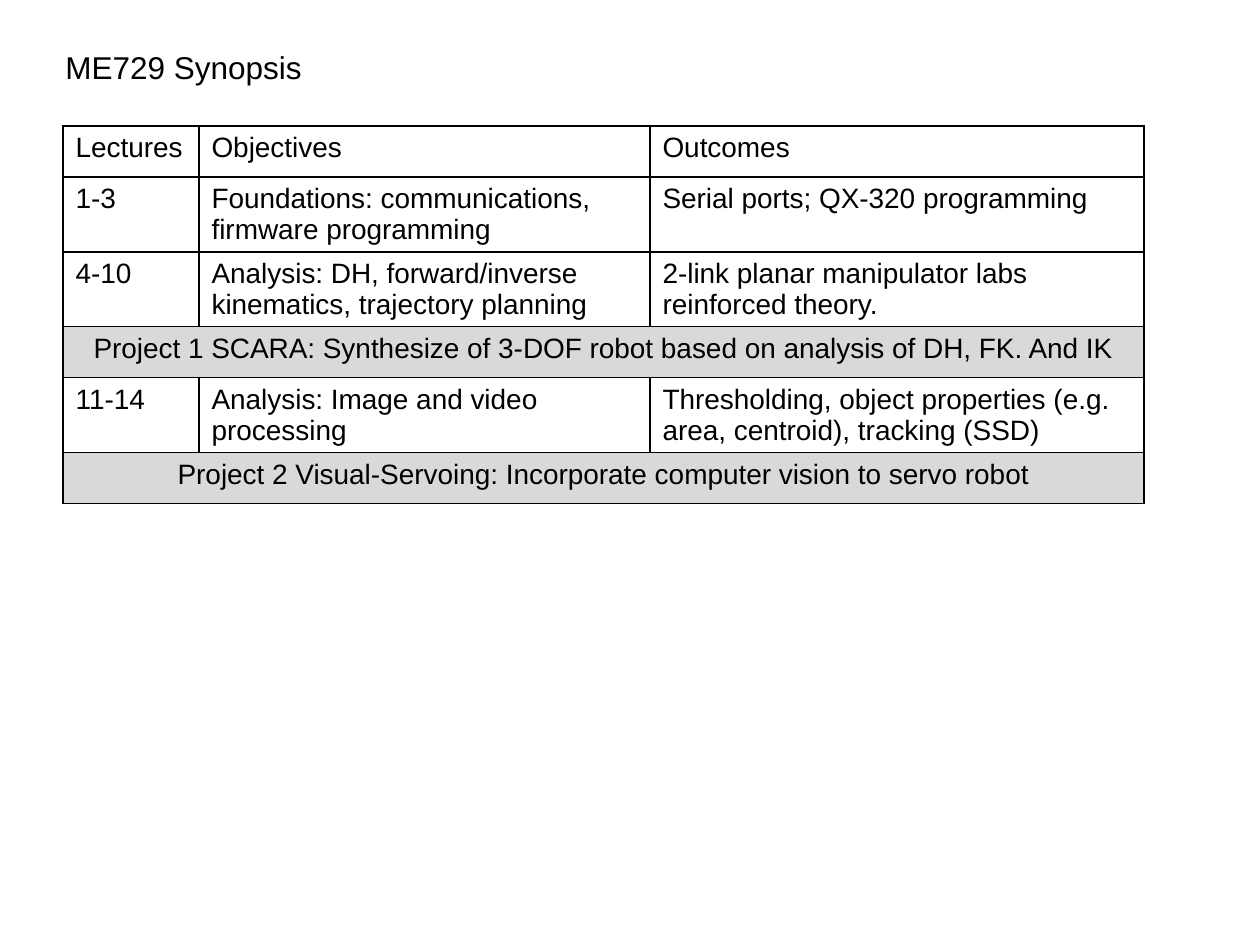
"""Build the ME729 synopsis slide with its lecture table."""
from dataclasses import dataclass

from lxml.etree import SubElement
from pptx import Presentation
from pptx.dml.color import RGBColor
from pptx.enum.text import MSO_AUTO_SIZE, PP_ALIGN
from pptx.oxml.ns import qn
from pptx.util import Pt

TITLE = "ME729 Synopsis"
ROWS = [
    ("Lectures", "Objectives", "Outcomes"),
    ("1-3", "Foundations: communications, firmware programming",
     "Serial ports; QX-320 programming"),
    ("4-10", "Analysis: DH, forward/inverse kinematics, trajectory planning",
     "2-link planar manipulator labs reinforced theory."),
    ("Project 1 SCARA: Synthesize of 3-DOF robot based on analysis of DH, FK. And IK",),
    ("11-14", "Analysis: Image and video processing",
     "Thresholding, object properties (e.g. area, centroid), tracking (SSD)"),
    ("Project 2 Visual-Servoing: Incorporate computer vision to servo robot",),
]
COLUMN_WIDTHS = (136, 451, 494)
ROW_HEIGHT = 51
TABLE_LEFT, TABLE_TOP = 63, 126
TITLE_BOX = (53, 42, 265, 50)
SLIDE_SIZE = (1260, 945)


@dataclass(frozen=True)
class Theme:
    font: str = "Arial"
    ink: str = "000000"
    band: str = "D9D9D9"
    title_size: int = 18
    body_size: int = 16
    border: int = 1


THEME = Theme()


def px(length):
    return round(length * 914400 / 126)


def write(text_frame, text, size, alignment=PP_ALIGN.LEFT):
    text_frame.text = text
    paragraph = text_frame.paragraphs[0]
    paragraph.alignment = alignment
    font = paragraph.runs[0].font
    font.name = THEME.font
    font.size = Pt(size)
    font.color.rgb = RGBColor.from_string(THEME.ink)


def add_borders(cell):
    properties = cell._tc.get_or_add_tcPr()
    for side in ("lnL", "lnR", "lnT", "lnB"):
        line = SubElement(properties, qn(f"a:{side}"), w=str(Pt(THEME.border)))
        fill = SubElement(line, qn("a:solidFill"))
        SubElement(fill, qn("a:srgbClr"), val=THEME.ink)


def add_title(slide):
    text_box = slide.shapes.add_textbox(*map(px, TITLE_BOX))
    text_box.text_frame.word_wrap = False
    text_box.text_frame.auto_size = MSO_AUTO_SIZE.SHAPE_TO_FIT_TEXT
    write(text_box.text_frame, TITLE, THEME.title_size)


def add_lecture_table(slide):
    frame = slide.shapes.add_table(
        len(ROWS), len(COLUMN_WIDTHS), px(TABLE_LEFT), px(TABLE_TOP),
        px(sum(COLUMN_WIDTHS)), px(ROW_HEIGHT * len(ROWS)))
    table = frame.table
    table.first_row = table.horz_banding = False
    for column, width in zip(table.columns, COLUMN_WIDTHS):
        column.width = px(width)
    for row, texts in zip(table.rows, ROWS):
        row.height = px(ROW_HEIGHT)
        cells = list(row.cells)
        is_project = len(texts) == 1
        for cell in cells:
            add_borders(cell)
            if is_project:
                cell.fill.solid()
                cell.fill.fore_color.rgb = RGBColor.from_string(THEME.band)
            else:
                cell.fill.background()
        if is_project:
            cells[0].merge(cells[-1])
        alignment = PP_ALIGN.CENTER if is_project else PP_ALIGN.LEFT
        for cell, text in zip(cells, texts):
            write(cell.text_frame, text, THEME.body_size, alignment)


def main():
    presentation = Presentation()
    presentation.slide_width, presentation.slide_height = map(px, SLIDE_SIZE)
    slide = presentation.slides.add_slide(presentation.slide_layouts[6])
    add_lecture_table(slide)
    add_title(slide)
    presentation.save("out.pptx")


if __name__ == "__main__":
    main()
